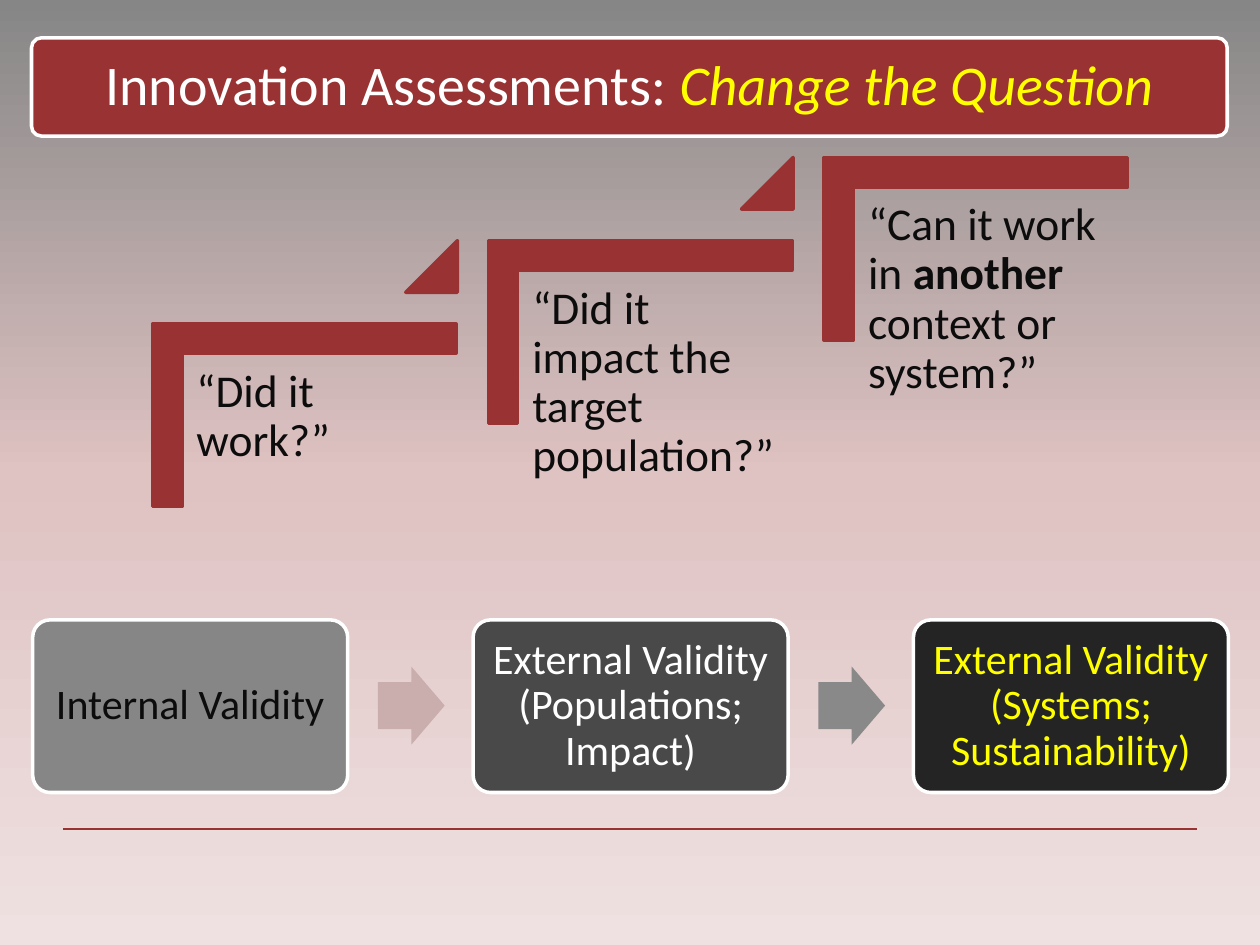
from copy import deepcopy
from dataclasses import dataclass

from pptx import Presentation
from pptx.dml.color import RGBColor
from pptx.enum.shapes import MSO_CONNECTOR, MSO_SHAPE
from pptx.enum.text import MSO_ANCHOR, PP_ALIGN
from pptx.oxml.ns import qn
from pptx.shapes.autoshape import Shape
from pptx.slide import Slide
from pptx.util import Inches, Pt
from lxml.etree import SubElement


@dataclass(frozen=True)
class Theme:
    font: str = "Calibri"
    red: str = "993333"
    white: str = "FFFFFF"
    yellow: str = "FFFF00"
    ink: str = "0C0C0C"
    sky: tuple[str, ...] = ("868686", "DFC2C2", "EFE1E1")
    title: int = 32
    step: int = 26
    box: int = 24
    edge: float = 2
    rule: float = 0.75


@dataclass(frozen=True)
class Run:
    text: str
    color: str
    bold: bool = False
    italic: bool = False


@dataclass(frozen=True)
class Box:
    text: str
    fill: str
    color: str
    arrow: str = ""  # colour of the arrow that leads on


T = Theme()
STEPS = (
    (Run("“Did it work?”", T.ink),),
    (Run("“Did it impact the target population?”", T.ink),),
    (Run("“Can it work in ", T.ink), Run("another", T.ink, bold=True),
     Run(" context or system?”", T.ink)),
)
BOXES = (
    Box("Internal Validity", "868686", T.ink, "CAAEAE"),
    Box("External Validity (Populations; Impact)", "494949", T.white, "898989"),
    Box("External Validity (Systems; Sustainability)", "242424", T.yellow),
)


def add_shape(slide: Slide, kind: MSO_SHAPE, x: float, y: float, w: float, h: float,
              fill: str, line: str = "", adj: tuple[float, ...] = ()) -> Shape:
    shape = slide.shapes.add_shape(kind, Inches(x), Inches(y), Inches(w), Inches(h))
    shape.shadow.inherit = False
    shape.fill.solid()
    shape.fill.fore_color.rgb = RGBColor.from_string(fill)
    if line:
        shape.line.color.rgb = RGBColor.from_string(line)
        shape.line.width = Pt(T.edge)
    else:
        shape.line.fill.background()
    for i, value in enumerate(adj):
        shape.adjustments[i] = value
    return shape


def set_text(shape: Shape, runs: tuple[Run, ...], *, size: int, pad: float,
             align: PP_ALIGN = PP_ALIGN.CENTER,
             anchor: MSO_ANCHOR = MSO_ANCHOR.MIDDLE) -> None:
    frame = shape.text_frame
    frame.word_wrap = True
    frame.vertical_anchor = anchor
    frame.margin_left = frame.margin_right = Inches(pad)
    frame.margin_top = frame.margin_bottom = Inches(pad)
    para = frame.paragraphs[0]
    para.alignment = align
    para.line_spacing = 0.9
    for item in runs:
        run = para.add_run()
        run.text = item.text
        run.font.name = T.font
        run.font.size = Pt(size)
        run.font.bold = item.bold
        run.font.italic = item.italic
        run.font.color.rgb = RGBColor.from_string(item.color)


def add_sky(slide: Slide) -> None:
    fill = slide.background.fill
    fill.gradient()
    fill.gradient_angle = 270
    stops = slide.element.find(".//" + qn("a:gsLst"))
    stops.insert(1, deepcopy(stops[0]))
    for i, stop in enumerate(fill.gradient_stops):
        stop.position = i / 2
        stop.color.rgb = RGBColor.from_string(T.sky[i])


def add_rule(slide: Slide) -> None:
    y = Inches(6.58)
    rule = slide.shapes.add_connector(MSO_CONNECTOR.STRAIGHT, Inches(0.5), y, Inches(9.5), y)
    rule.line.color.rgb = RGBColor.from_string(T.red)
    rule.line.width = Pt(T.rule)
    SubElement(rule.element.spPr, qn("a:effectLst"))


def add_step(slide: Slide, i: int, runs: tuple[Run, ...]) -> None:
    x, y = 1.45 + 2.665 * i, 2.81 - 0.66 * i
    corner = add_shape(slide, MSO_SHAPE.CORNER, x + 0.24, y - 0.72, 1.45, 2.41,
                       T.red, T.red, (0.161, 0.161))
    corner.rotation = 90
    label = slide.shapes.add_textbox(Inches(x), Inches(y), Inches(2.17), Inches(1.91))
    set_text(label, runs, size=T.step, pad=0.11, align=PP_ALIGN.LEFT, anchor=MSO_ANCHOR.TOP)
    if i < len(STEPS) - 1:
        add_shape(slide, MSO_SHAPE.ISOSCELES_TRIANGLE, x + 1.77, y - 0.9, 0.41, 0.41,
                  T.red, T.red, (1,))


def add_box(slide: Slide, i: int, box: Box) -> None:
    x = 0.26 + 3.495 * i
    shape = add_shape(slide, MSO_SHAPE.ROUNDED_RECTANGLE, x, 4.92, 2.5, 1.37,
                      box.fill, T.white, (0.1,))
    set_text(shape, (Run(box.text, box.color),), size=T.box, pad=0.1)
    if box.arrow:
        add_shape(slide, MSO_SHAPE.RIGHT_ARROW, x + 2.74, 5.29, 0.53, 0.62,
                  box.arrow, adj=(0.6, 0.5))


def main() -> None:
    deck = Presentation()
    deck.slide_width, deck.slide_height = Inches(10), Inches(7.5)
    slide = deck.slides.add_slide(deck.slide_layouts[6])
    add_sky(slide)
    add_rule(slide)

    # Title bar
    bar = add_shape(slide, MSO_SHAPE.ROUNDED_RECTANGLE, 0.25, 0.3, 9.49, 0.78,
                    T.red, T.white, (0.1,))
    set_text(bar, (Run("Innovation Assessments: ", T.white),
                   Run("Change the Question", T.yellow, italic=True)),
             size=T.title, pad=0.13)

    # Rising questions
    for i, runs in enumerate(STEPS):
        add_step(slide, i, runs)

    # Kinds of validity
    for i, box in enumerate(BOXES):
        add_box(slide, i, box)

    deck.save("out.pptx")


if __name__ == "__main__":
    main()
